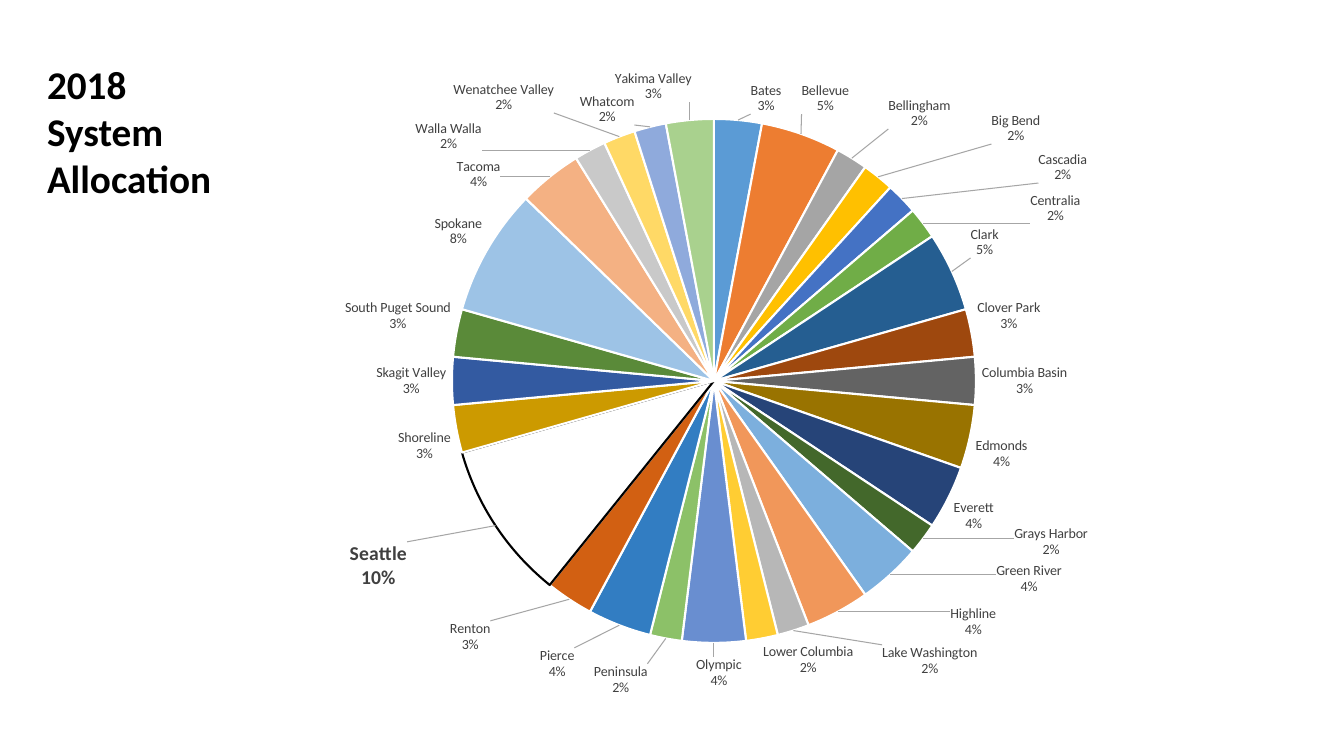
from dataclasses import dataclass
from math import cos, radians, sin
from typing import Optional

from pptx import Presentation
from pptx.chart.data import CategoryChartData
from pptx.dml.color import RGBColor
from pptx.enum.chart import XL_CHART_TYPE, XL_LABEL_POSITION
from pptx.enum.text import MSO_ANCHOR, MSO_AUTO_SIZE, PP_ALIGN
from pptx.oxml import parse_xml
from pptx.oxml.ns import nsdecls, qn
from pptx.util import Emu, Pt

PIE = XL_CHART_TYPE.PIE
OUTSIDE_END = XL_LABEL_POSITION.OUTSIDE_END
LEFT = PP_ALIGN.LEFT
TOP = MSO_ANCHOR.TOP
NO_AUTOFIT = MSO_AUTO_SIZE.NONE

BLACK = RGBColor(0x00, 0x00, 0x00)
WHITE = RGBColor(0xFF, 0xFF, 0xFF)
LABEL_GRAY = RGBColor(0x40, 0x40, 0x40)
LEADER_GRAY = RGBColor(0xA6, 0xA6, 0xA6)

FONT = "Calibri"
EMU_PER_PX = 914400 / 100.8
SLIDE_W, SLIDE_H = 1344, 756
CHART_X, CHART_Y, CHART_W, CHART_H = 228, 68, 954, 629
PIE_X, PIE_Y, RADIUS = 714, 381, 262
LABEL_GAP = 6
HIGHLIGHT = "Seattle"


@dataclass
class College:
    name: str
    share: int
    color: RGBColor
    label: Optional[tuple[int, int]] = None  # centre of a moved label, px


def college(name: str, share: int, color: str, *label: int) -> College:
    return College(name, share, RGBColor.from_string(color), label or None)


COLLEGES = [
    college("Bates", 3, "5B9BD5", 766, 98),
    college("Bellevue", 5, "ED7D31", 826, 98),
    college("Bellingham", 2, "A5A5A5", 919, 113),
    college("Big Bend", 2, "FFC000", 1016, 128),
    college("Cascadia", 2, "4472C4", 1063, 167),
    college("Centralia", 2, "70AD47", 1058, 208),
    college("Clark", 5, "255E91", 986, 242),
    college("Clover Park", 3, "9E480E"),
    college("Columbia Basin", 3, "636363"),
    college("Edmonds", 4, "997300"),
    college("Everett", 4, "264478"),
    college("Grays Harbor", 2, "43682B", 1051, 542),
    college("Green River", 4, "7CAFDD", 1030, 579),
    college("Highline", 4, "F1975A", 975, 622),
    college("Lake Washington", 2, "B7B7B7", 928, 661),
    college("Lower Columbia", 2, "FFCD33"),
    college("Olympic", 4, "698ED0", 719, 673),
    college("Peninsula", 2, "8CC168", 620, 680),
    college("Pierce", 4, "327DC2", 556, 664),
    college("Renton", 3, "D26012", 472, 637),
    college("Seattle", 10, "FFFFFF", 378, 566),
    college("Shoreline", 3, "CC9A00"),
    college("Skagit Valley", 3, "335AA1"),
    college("South Puget Sound", 3, "5A8A39"),
    college("Spokane", 8, "9DC3E6"),
    college("Tacoma", 4, "F4B183", 482, 174),
    college("Walla Walla", 2, "C9C9C9", 448, 136),
    college("Wenatchee Valley", 2, "FFD966", 505, 97),
    college("Whatcom", 2, "8FAADC", 613, 109),
    college("Yakima Valley", 3, "A9D18E", 652, 86),
]


def px(n: int) -> Emu:
    return Emu(round(n * EMU_PER_PX))


def style_font(font, color: RGBColor, **values) -> None:
    for name, value in {"name": FONT, **values}.items():
        setattr(font, name, value)
    font.color.rgb = color


def side(x: float) -> int:
    """Direction in which a label grows from its anchor; 0 means centred."""
    return 0 if abs(x) <= sin(radians(5)) else (1 if x > 0 else -1)


def label_offset(c: College, middle: float) -> tuple[float, float]:
    """Shift from the outside-end place, as fractions of the chart."""
    dx, dy = sin(middle), -cos(middle)
    width, height = (58, 48) if c.name == HIGHLIGHT else (6.1 * len(c.name), 32)
    reach = RADIUS + LABEL_GAP
    x = PIE_X + reach * dx + side(dx) * width / 2
    y = PIE_Y + reach * dy + side(dy) * height / 2
    return (c.label[0] - x) / CHART_W, (c.label[1] - y) / CHART_H


def layout_xml(x: float, y: float, inner: str = "", size: str = "") -> str:
    return (f'<c:layout {nsdecls("c")}><c:manualLayout>{inner}'
            f'<c:x val="{x:.4f}"/><c:y val="{y:.4f}"/>{size}'
            '</c:manualLayout></c:layout>')


def place_plot(chart) -> None:
    area = chart._chartSpace.chart.plotArea
    for old in area.findall(qn("c:layout")):
        area.remove(old)
    inner = ('<c:layoutTarget val="inner"/><c:xMode val="edge"/>'
             '<c:yMode val="edge"/>')
    size = (f'<c:w val="{2 * RADIUS / CHART_W:.4f}"/>'
            f'<c:h val="{2 * RADIUS / CHART_H:.4f}"/>')
    area.insert(0, parse_xml(layout_xml((PIE_X - RADIUS - CHART_X) / CHART_W,
                                        (PIE_Y - RADIUS - CHART_Y) / CHART_H,
                                        inner, size)))


def format_labels(series) -> None:
    labels = series.data_labels
    for name, value in {"show_value": False, "show_category_name": True,
                        "show_percentage": True,
                        "position": OUTSIDE_END}.items():
        setattr(labels, name, value)
    style_font(labels.font, LABEL_GRAY, size=Pt(10))
    group = labels._element
    separator = f'<c:separator {nsdecls("c")}>\n</c:separator>'
    group.find(qn("c:showBubbleSize")).addnext(parse_xml(separator))
    for old in group.findall(qn("c:showLeaderLines")):
        group.remove(old)
    group.append(parse_xml(f'<c:showLeaderLines {nsdecls("c")} val="1"/>'))
    group.append(parse_xml(
        f'<c:leaderLines {nsdecls("c", "a")}><c:spPr><a:ln w="9525"><a:solidFill>'
        f'<a:srgbClr val="{LEADER_GRAY}"/></a:solidFill></a:ln></c:spPr>'
        '</c:leaderLines>'))

    # Moved labels
    flags = "".join(f'<c:show{part} val="{int(part in ("CatName", "Percent"))}"/>'
                    for part in ("LegendKey", "Val", "CatName", "SerName",
                                 "Percent", "BubbleSize"))
    total = sum(c.share for c in COLLEGES)
    done = moved = 0
    for i, c in enumerate(COLLEGES):
        middle = radians(360 * (done + c.share / 2) / total)
        done += c.share
        if c.label is None:
            continue
        group.insert(moved, parse_xml(
            f'<c:dLbl {nsdecls("c")}><c:idx val="{i}"/>'
            f'{layout_xml(*label_offset(c, middle))}'
            f'<c:dLblPos val="outEnd"/>{flags}{separator}</c:dLbl>'))
        moved += 1
        big = c.name == HIGHLIGHT
        style_font(series.points[i].data_label.font, LABEL_GRAY,
                   size=Pt(14 if big else 10), bold=big)


def add_pie(slide) -> None:
    data = CategoryChartData()
    data.categories = [c.name for c in COLLEGES]
    data.add_series("Series 1", [c.share for c in COLLEGES])
    chart = slide.shapes.add_chart(PIE, px(CHART_X), px(CHART_Y), px(CHART_W),
                                   px(CHART_H), data).chart
    chart.has_title = chart.has_legend = False
    style_font(chart.font, BLACK, size=Pt(10))
    place_plot(chart)
    plot = chart.plots[0]
    plot.vary_by_categories = True
    series = plot.series[0]
    for i, c in enumerate(COLLEGES):
        fmt = series.points[i].format
        fmt.fill.solid()
        fmt.fill.fore_color.rgb = c.color
        fmt.line.color.rgb = BLACK if c.name == HIGHLIGHT else WHITE
        fmt.line.width = Pt(1.5)
    format_labels(series)


def set_title(slide) -> None:
    sp = slide.shapes.title
    sp.left, sp.top, sp.width, sp.height = px(37), px(55), px(191), px(152)
    tf = sp.text_frame
    tf.text = "2018 System\nAllocation"
    for name, value in {"word_wrap": True, "vertical_anchor": TOP,
                        "auto_size": NO_AUTOFIT}.items():
        setattr(tf, name, value)
    for p in tf.paragraphs:
        p.alignment = LEFT
        style_font(p.runs[0].font, BLACK, size=Pt(28), bold=True)


def main() -> None:
    prs = Presentation()
    prs.slide_width, prs.slide_height = px(SLIDE_W), px(SLIDE_H)
    slide = prs.slides.add_slide(prs.slide_layouts.get_by_name("Title Only"))
    set_title(slide)
    add_pie(slide)
    prs.save("out.pptx")


if __name__ == "__main__":
    main()
